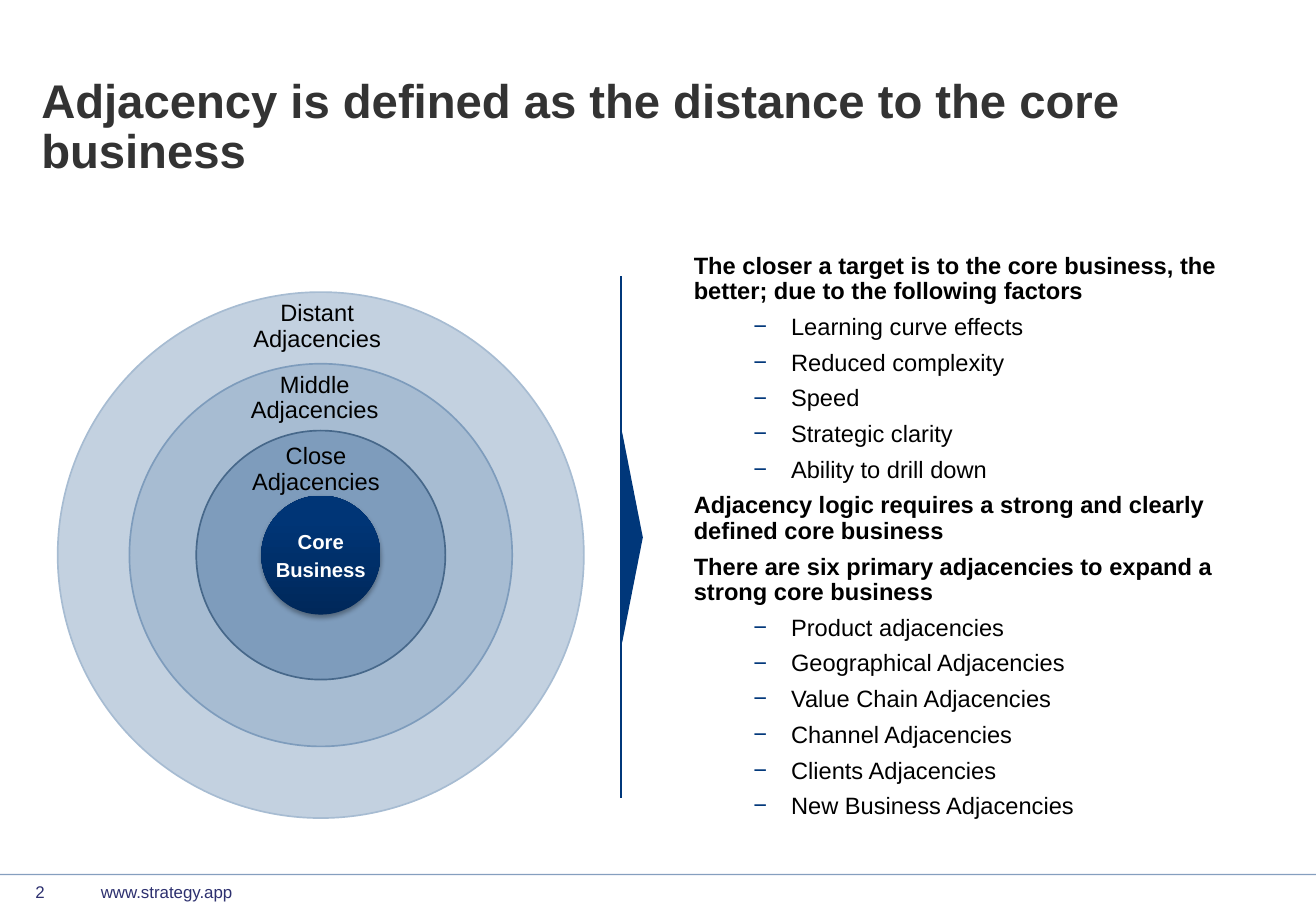
from lxml import etree
from pptx import Presentation
from pptx.dml.color import RGBColor
from pptx.enum.shapes import MSO_CONNECTOR, MSO_SHAPE
from pptx.enum.text import MSO_ANCHOR, PP_ALIGN
from pptx.oxml.ns import qn
from pptx.util import Inches, Pt

OVAL = MSO_SHAPE.OVAL
TRIANGLE = MSO_SHAPE.ISOSCELES_TRIANGLE
STRAIGHT = MSO_CONNECTOR.STRAIGHT
TOP, MIDDLE = MSO_ANCHOR.TOP, MSO_ANCHOR.MIDDLE
LEFT, CENTER = PP_ALIGN.LEFT, PP_ALIGN.CENTER

FONT = "Arial"
NAVY = "00377A"
FOOTER = "2D306F"
BLACK = "000000"
CENTER_X, CENTER_Y = 2.64, 4.57

RINGS = [
    (4.33, "C3D1E0", "A7BCD2"),
    (3.15, "A7BCD2", "7E9CBC"),
    (2.05, "7E9CBC", "47688A"),
]
LABELS = [
    (2.05, 2.48, "Distant\vAdjacencies"),
    (2.03, 3.07, "Middle\vAdjacencies"),
    (2.04, 3.66, "Close\vAdjacencies"),
]
SECTIONS = [
    ("The closer a target is to the core business, the better; due to the following factors",
     ["Learning curve effects", "Reduced complexity", "Speed",
      "Strategic clarity", "Ability to drill down"]),
    ("Adjacency logic requires a strong and clearly defined core business", []),
    ("There are six primary adjacencies to expand a strong core business",
     ["Product adjacencies", "Geographical Adjacencies", "Value Chain Adjacencies",
      "Channel Adjacencies", "Clients Adjacencies", "New Business Adjacencies"]),
]


def rgb(value):
    return RGBColor.from_string(value)


def add_text(page, place, lines, size, color, bold=False, align=LEFT,
             anchor=TOP, inset=0, spacing=1.0, before=0):
    box = page.shapes.add_textbox(*[Inches(value) for value in place])
    frame = box.text_frame
    frame.word_wrap = True
    frame.vertical_anchor = anchor
    frame.margin_left = frame.margin_right = Inches(inset)
    frame.margin_top = frame.margin_bottom = Inches(inset)
    frame.text = "\n".join(lines)
    for index, para in enumerate(frame.paragraphs):
        para.alignment = align
        para.line_spacing = spacing
        para.space_before = Pt(before if index else 0)
        for span in para.runs:
            span.font.name = FONT
            span.font.size = Pt(size)
            span.font.bold = bold
            span.font.color.rgb = rgb(color)
    return box


def add_bullet(para):
    para.level = 1
    properties = para._p.get_or_add_pPr()
    properties.set("marL", str(Inches(0.8)))
    properties.set("indent", str(Inches(-0.31)))
    bullet_color = etree.SubElement(properties, qn("a:buClr"))
    etree.SubElement(bullet_color, qn("a:srgbClr"), val=NAVY)
    etree.SubElement(properties, qn("a:buFont"), typeface=FONT)
    etree.SubElement(properties, qn("a:buChar"), char="−")


def add_body(page):
    entries = []
    for heading, items in SECTIONS:
        entries.append((heading, True))
        entries += [(item, False) for item in items]
    box = add_text(page, (5.71, 2.09, 4.78, 4.99), [text for text, _ in entries],
                   14, BLACK, spacing=0.9, before=6)
    for para, (_, is_heading) in zip(box.text_frame.paragraphs, entries):
        if is_heading:
            para.runs[0].font.bold = True
        else:
            add_bullet(para)


def add_circle(page, diameter):
    circle = page.shapes.add_shape(
        OVAL, Inches(CENTER_X - diameter / 2), Inches(CENTER_Y - diameter / 2),
        Inches(diameter), Inches(diameter))
    circle.shadow.inherit = False
    return circle


def add_ring(page, diameter, fill, outline):
    ring = add_circle(page, diameter)
    ring.fill.solid()
    ring.fill.fore_color.rgb = rgb(fill)
    ring.line.color.rgb = rgb(outline)
    ring.line.width = Pt(1)


def add_core(page):
    core = add_circle(page, 0.98)
    core.line.fill.background()
    core.fill.gradient()
    core.fill.gradient_angle = 90
    stops = zip(core.fill.gradient_stops, [(0, "00285A"), (0.8, "003576")])
    for stop, (position, color) in stops:
        stop.position = position
        stop.color.rgb = rgb(color)
    effects = core._element.spPr.find(qn("a:effectLst"))
    shadow = etree.SubElement(effects, qn("a:outerShdw"), blurRad=str(Pt(3)),
                              dist=str(Pt(1.8)), dir="5400000", rotWithShape="0")
    shade = etree.SubElement(shadow, qn("a:srgbClr"), val=BLACK)
    etree.SubElement(shade, qn("a:alpha"), val="35000")
    add_text(page, (CENTER_X - 0.45, 4.36, 0.9, 0.43), ["Core", "Business"], 12,
             "FFFFFF", bold=True, align=CENTER, anchor=MIDDLE, before=2)


def add_line(page, start, end, opacity=100):
    line = page.shapes.add_connector(
        STRAIGHT, *[Inches(value) for value in (*start, *end)])
    line.line.color.rgb = rgb(NAVY)
    line.line.width = Pt(0.75)
    properties = line._element.spPr
    if opacity < 100:
        color = properties.find(".//" + qn("a:srgbClr"))
        etree.SubElement(color, qn("a:alpha"), val=str(opacity * 1000))
    etree.SubElement(properties, qn("a:effectLst"))


def add_divider(page):
    pointer = page.shapes.add_shape(
        TRIANGLE, Inches(4.34), Inches(4.34), Inches(1.73), Inches(0.17))
    pointer.rotation = 90
    pointer.shadow.inherit = False
    pointer.fill.solid()
    pointer.fill.fore_color.rgb = rgb(NAVY)
    pointer.line.fill.background()
    add_line(page, (5.11, 6.57), (5.11, 2.27))


def add_footer(page):
    add_line(page, (0, 7.2), (10.83, 7.2), opacity=47)
    for left, width, text in [(0.24, 0.19, "2"), (0.78, 2.42, "www.strategy.app")]:
        add_text(page, (left, 7.21, width, 0.25), [text], 10, FOOTER, inset=0.05)


def main():
    deck = Presentation()
    deck.slide_width = Inches(10.83)
    deck.slide_height = Inches(7.5)
    page = deck.slides.add_slide(deck.slide_layouts[6])
    add_footer(page)
    add_text(page, (0.34, 0.65, 10.16, 0.55),
             ["Adjacency is defined as the distance to the core business"],
             28, "333333", bold=True, spacing=0.88)
    add_body(page)
    for diameter, fill, outline in RINGS:
        add_ring(page, diameter, fill, outline)
    add_core(page)
    for left, top, label in LABELS:
        add_text(page, (left, top, 1.12, 0.42), [label], 14, BLACK,
                 align=CENTER, spacing=0.9)
    add_divider(page)
    deck.save("out.pptx")


if __name__ == "__main__":
    main()
